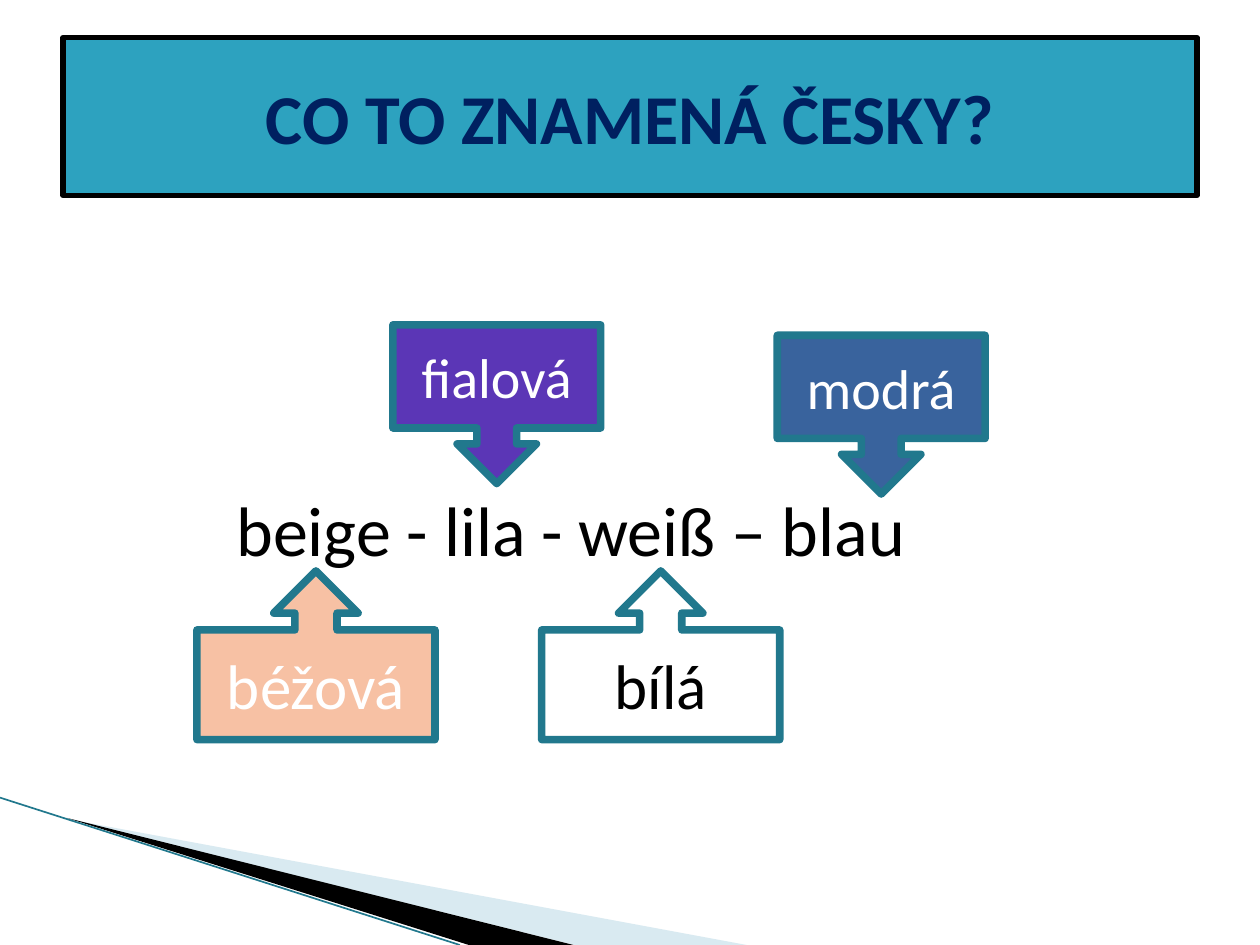
from dataclasses import dataclass

from lxml.etree import SubElement
from pptx import Presentation
from pptx.dml.color import RGBColor
from pptx.enum.shapes import MSO_CONNECTOR, MSO_SHAPE
from pptx.enum.text import MSO_ANCHOR, PP_ALIGN
from pptx.oxml.ns import qn
from pptx.util import Cm, Pt

TEAL = "21788D"
UP = MSO_SHAPE.UP_ARROW_CALLOUT
DOWN = MSO_SHAPE.DOWN_ARROW_CALLOUT


@dataclass
class Callout:
    text: str
    kind: MSO_SHAPE
    left: float
    top: float
    fill: str
    color: str = "FFFFFF"


# Width, height (cm) and text size of each callout kind
CALLOUT_SIZES = {UP: (4.8, 3.4, 36), DOWN: (4.19, 3.2, 32)}

CALLOUTS = [
    Callout("béžová", UP, 3.97, 11.51, "F7C1A4"),
    Callout("bílá", UP, 10.92, 11.51, "FFFFFF", "000000"),
    Callout("fialová", DOWN, 7.92, 6.55, "5B36B6"),
    Callout("modrá", DOWN, 15.67, 6.76, "39639D"),
]


def rgb(value: str) -> RGBColor:
    return RGBColor.from_string(value)


def add_text(sp, text: str, size: float, color: str, bold: bool = False) -> None:
    tf = sp.text_frame
    tf.word_wrap = True
    tf.vertical_anchor = MSO_ANCHOR.MIDDLE
    p = tf.paragraphs[0]
    p.alignment = PP_ALIGN.CENTER
    r = p.add_run()
    r.text = text
    r.font.name = "Calibri"
    r.font.size = Pt(size)
    r.font.bold = bold
    r.font.color.rgb = rgb(color)


def add_box(s, kind: MSO_SHAPE, left: float, top: float, width: float,
            height: float, fill: str, line: str, weight: float):
    sp = s.shapes.add_shape(kind, Cm(left), Cm(top), Cm(width), Cm(height))
    sp.shadow.inherit = False
    sp.fill.solid()
    sp.fill.fore_color.rgb = rgb(fill)
    sp.line.color.rgb = rgb(line)
    sp.line.width = Pt(weight)
    return sp


def add_wedge(s, points: list[tuple[float, float]], fill: str):
    start, *rest = [(Cm(x), Cm(y)) for x, y in points]
    builder = s.shapes.build_freeform(*start)
    builder.add_line_segments(rest)
    sp = builder.convert_to_shape()
    sp.shadow.inherit = False
    sp.fill.solid()
    sp.fill.fore_color.rgb = rgb(fill)
    sp.line.fill.background()
    return sp


def main() -> None:
    prs = Presentation()
    prs.slide_width, prs.slide_height = Cm(25.4), Cm(19.05)
    s = prs.slides.add_slide(prs.slide_layouts[6])

    # Corner decoration
    pale = add_wedge(s, [(1.4, 16.52), (15.05, 19.05), (11.58, 19.05)], "A0CBDC")
    color = pale.fill._xPr.find(qn("a:solidFill"))[0]
    SubElement(color, qn("a:alpha"), val="40000")
    add_wedge(s, [(1.35, 16.49), (11.56, 19.05), (9.45, 19.05)], "000000")
    edge = s.shapes.add_connector(MSO_CONNECTOR.STRAIGHT, Cm(0), Cm(16.08),
                                  Cm(9.27), Cm(19.05))
    edge.line.color.rgb = rgb(TEAL)
    edge.line.width = Pt(0.95)
    SubElement(edge._element.spPr, qn("a:effectLst"))

    # German colour words
    words = s.shapes.add_textbox(Cm(3.81), Cm(9.78), Cm(15.4), Cm(1.73))
    tf = words.text_frame
    tf.margin_left = tf.margin_right = tf.margin_top = tf.margin_bottom = 0
    add_text(words, "beige - lila - weiß – blau", 40, "000000")

    # Title
    title = add_box(s, MSO_SHAPE.RECTANGLE, 1.27, 0.76, 22.86, 3.18,
                    "2DA2BF", "000000", 3)
    add_text(title, "CO TO ZNAMENÁ ČESKY?", 40, "002060", bold=True)

    # Czech translations
    for c in CALLOUTS:
        width, height, size = CALLOUT_SIZES[c.kind]
        sp = add_box(s, c.kind, c.left, c.top, width, height, c.fill, TEAL, 4.33)
        add_text(sp, c.text, size, c.color)

    prs.save("out.pptx")


if __name__ == "__main__":
    main()
